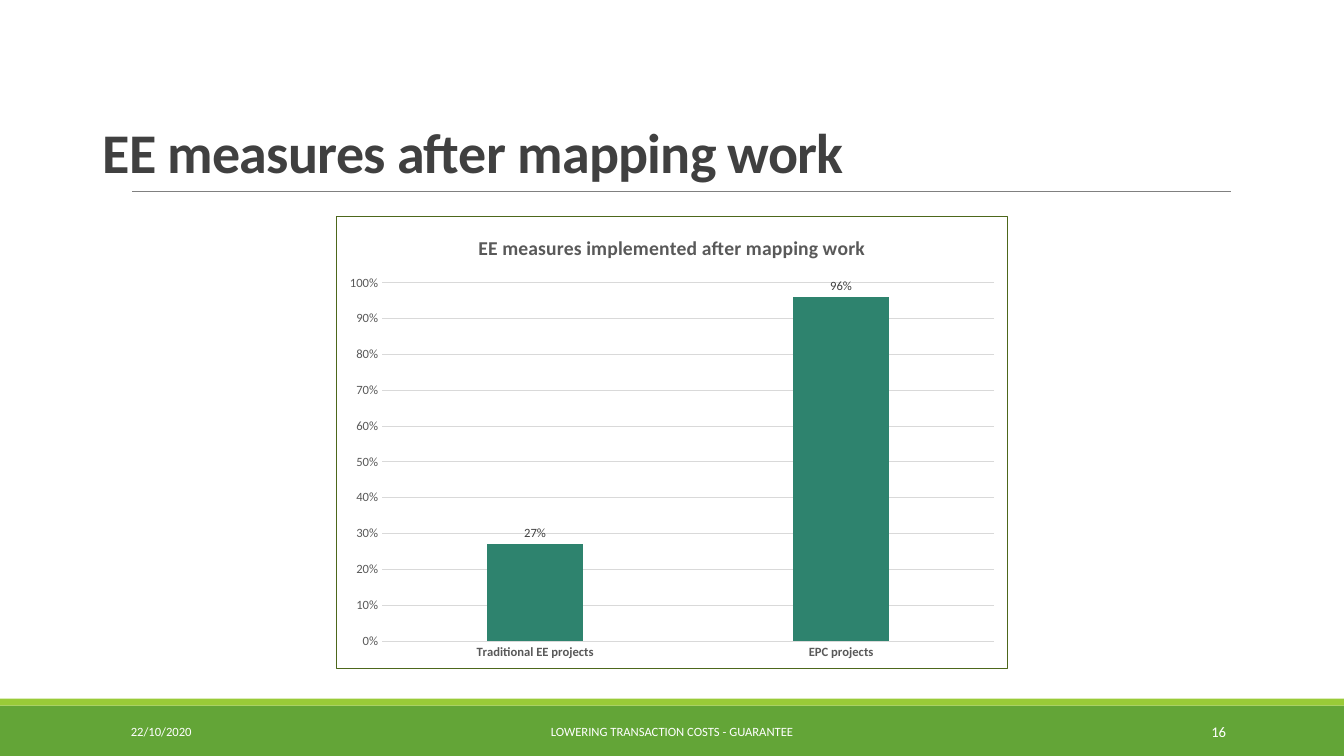
import lxml.etree
import pptx
import pptx.chart.data
import pptx.dml.color
import pptx.enum.chart
import pptx.enum.shapes
import pptx.enum.text
import pptx.oxml.ns
import pptx.util

WIDTH = pptx.util.Inches(13.33)
HEIGHT = pptx.util.Inches(7.5)
COLUMNS = ROWS = 100
COLORS = {
    "white": "FFFFFF",
    "band": "63A537",
    "stripe": "99CB38",
    "rule": "808080",
    "title": "404040",
    "axis": "595959",
    "grid": "D9D9D9",
    "border": "4D671B",
    "column": "2E836E",
}
ALIGN = pptx.enum.text.PP_ALIGN
ANCHOR = pptx.enum.text.MSO_ANCHOR
TICK = pptx.enum.chart.XL_TICK_MARK
qn = pptx.oxml.ns.qn


def rgb(name):
    return pptx.dml.color.RGBColor.from_string(COLORS[name])


def grid(col, row, cols, rows):
    return (
        int(WIDTH * col / COLUMNS),
        int(HEIGHT * row / ROWS),
        int(WIDTH * cols / COLUMNS),
        int(HEIGHT * rows / ROWS),
    )


def apply(obj, values):
    for name, value in values.items():
        setattr(obj, name, value)


def style_font(font, size, color, bold=False):
    apply(font, {"name": "Calibri", "size": pptx.util.Pt(size), "bold": bold})
    font.color.rgb = rgb(color)


def style_line(line, color, width):
    line.color.rgb = rgb(color)
    line.width = pptx.util.Pt(width)


def add_band(s, cell, color):
    sp = s.shapes.add_shape(pptx.enum.shapes.MSO_SHAPE.RECTANGLE, *grid(*cell))
    sp.shadow.inherit = False
    sp.fill.solid()
    sp.fill.fore_color.rgb = rgb(color)
    sp.line.fill.background()


def add_rule(s, cell):
    x, y, w, h = grid(*cell)
    line = s.shapes.add_connector(
        pptx.enum.shapes.MSO_CONNECTOR.STRAIGHT, x, y, x + w, y + h
    )
    style_line(line.line, "rule", 0.5)
    lxml.etree.SubElement(line._element.spPr, qn("a:effectLst"))


def add_text(s, cell, text, size, color="white", bold=False,
             anchor=ANCHOR.MIDDLE, align=ALIGN.LEFT, spacing=1.0, tracking=0):
    tf = s.shapes.add_textbox(*grid(*cell)).text_frame
    apply(tf, {"word_wrap": True, "vertical_anchor": anchor})
    p = tf.paragraphs[0]
    apply(p, {"alignment": align, "line_spacing": spacing})
    r = p.add_run()
    r.text = text
    style_font(r.font, size, color, bold)
    if tracking:
        r._r.get_or_add_rPr().set("spc", str(tracking))


def frame_chart(chart):
    space = chart._chartSpace
    if space.find(qn("c:roundedCorners")) is None:
        corners = lxml.etree.Element(qn("c:roundedCorners"), val="0")
        space.find(qn("c:date1904")).addnext(corners)
    sp_pr = lxml.etree.Element(qn("c:spPr"))
    fill = lxml.etree.SubElement(sp_pr, qn("a:solidFill"))
    lxml.etree.SubElement(fill, qn("a:srgbClr"), val=COLORS["white"])
    border = lxml.etree.SubElement(
        sp_pr, qn("a:ln"), w=str(int(pptx.util.Pt(0.75)))
    )
    paint = lxml.etree.SubElement(border, qn("a:solidFill"))
    lxml.etree.SubElement(paint, qn("a:srgbClr"), val=COLORS["border"])
    space.find(qn("c:chart")).addnext(sp_pr)


def style_axes(chart):
    ticks = {"major_tick_mark": TICK.NONE, "minor_tick_mark": TICK.NONE}
    cat, val = chart.category_axis, chart.value_axis
    for axis, bold in ((cat, True), (val, False)):
        apply(axis, ticks)
        style_font(axis.tick_labels.font, 9, "axis", bold)
    apply(val, {
        "minimum_scale": 0,
        "maximum_scale": 1,
        "major_unit": 0.1,
        "has_major_gridlines": True,
    })
    apply(val.tick_labels, {"number_format": "0%", "number_format_is_linked": False})
    style_line(cat.format.line, "grid", 0.75)
    style_line(val.major_gridlines.format.line, "grid", 0.75)
    val.format.line.fill.background()


def add_column_chart(s, cell, title, values):
    data = pptx.chart.data.CategoryChartData(number_format="0%")
    data.categories = list(values)
    data.add_series("Series 1", list(values.values()))
    chart = s.shapes.add_chart(
        pptx.enum.chart.XL_CHART_TYPE.COLUMN_CLUSTERED, *grid(*cell), data
    ).chart
    style_font(chart.font, 10, "axis")
    apply(chart, {"has_legend": False, "has_title": True})
    p = chart.chart_title.text_frame.paragraphs[0]
    r = p.add_run()
    r.text = title
    style_font(r.font, 14, "axis", True)
    style_axes(chart)
    plot = chart.plots[0]
    apply(plot, {
        "gap_width": 219,
        "overlap": -27,
        "vary_by_categories": False,
        "has_data_labels": True,
    })
    labels = plot.data_labels
    apply(labels, {
        "show_value": True,
        "position": pptx.enum.chart.XL_LABEL_POSITION.OUTSIDE_END,
        "number_format": "0%",
        "number_format_is_linked": False,
    })
    style_font(labels.font, 9, "title")
    fill = plot.series[0].format.fill
    fill.solid()
    fill.fore_color.rgb = rgb("column")
    frame_chart(chart)


def main():
    prs = pptx.Presentation()
    apply(prs, {"slide_width": WIDTH, "slide_height": HEIGHT})
    s = prs.slides.add_slide(prs.slide_layouts[6])

    add_band(s, (0, 93.33, 100, 6.67), "band")
    add_band(s, (0, 92.4, 100, 0.93), "stripe")
    add_rule(s, (9.83, 25.33, 81.75, 0))
    add_text(s, (6.9, 9.33, 86.25, 15.73), "EE measures after mapping work", 40,
             "title", True, ANCHOR.BOTTOM, spacing=0.85, tracking=-50)

    footer = (
        (9, 20.25, "22/10/2020", 9, ALIGN.LEFT),
        (30.23, 39.53, "LOWERING TRANSACTION COSTS - GUARANTEE", 9, ALIGN.CENTER),
        (81.23, 10.73, "16", 10.5, ALIGN.RIGHT),
    )
    for col, cols, text, size, align in footer:
        add_text(s, (col, 94.13, cols, 5.33), text, size, align=align)

    add_column_chart(s, (25, 28.53, 50, 60),
                     "EE measures implemented after mapping work",
                     {"Traditional EE projects": 0.27, "EPC projects": 0.96})
    prs.save("out.pptx")


if __name__ == "__main__":
    main()
